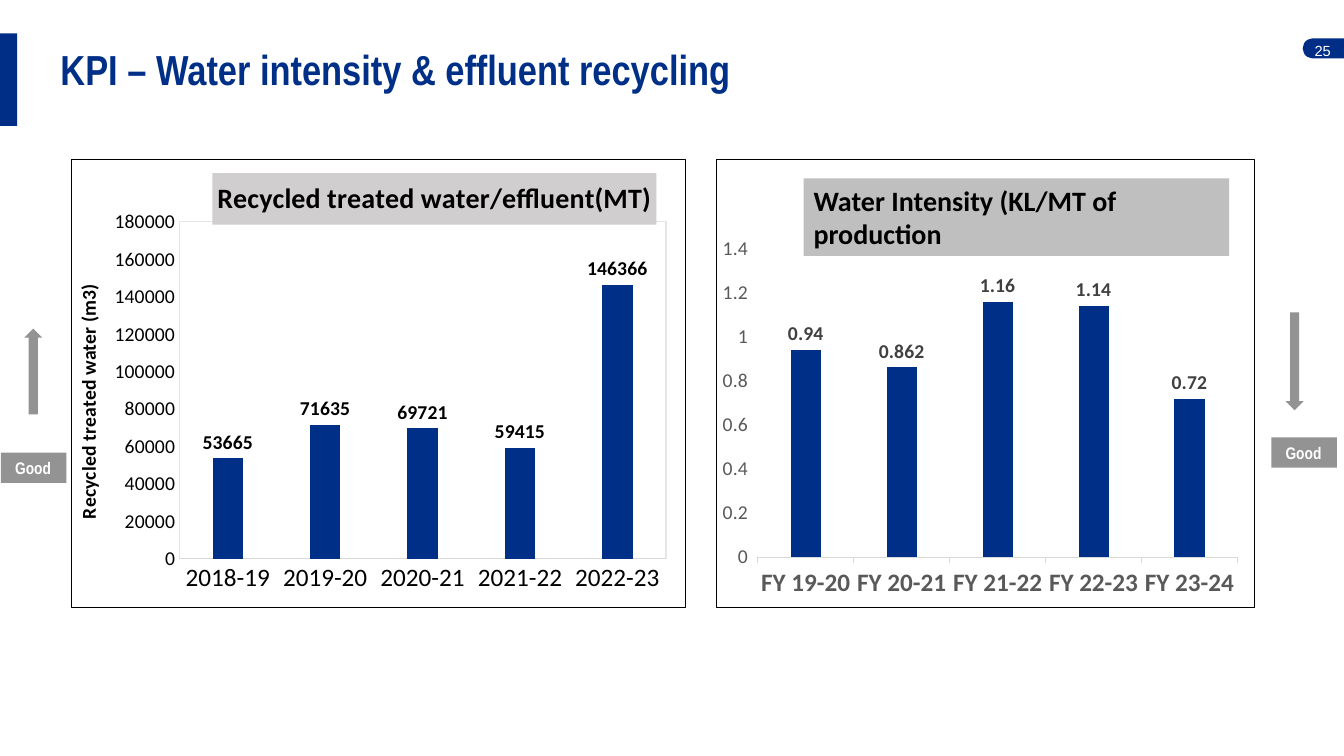
from lxml import etree
from pptx import Presentation
from pptx.chart.data import CategoryChartData
from pptx.dml.color import RGBColor
from pptx.enum.chart import XL_CHART_TYPE, XL_LABEL_POSITION, XL_TICK_MARK
from pptx.enum.shapes import MSO_SHAPE
from pptx.enum.text import MSO_ANCHOR, MSO_AUTO_SIZE, PP_ALIGN
from pptx.oxml import parse_xml
from pptx.util import Inches, Pt

COLUMNS = XL_CHART_TYPE.COLUMN_CLUSTERED
OUTSIDE_END = XL_LABEL_POSITION.OUTSIDE_END
TICK_NONE, TICK_OUT = XL_TICK_MARK.NONE, XL_TICK_MARK.OUTSIDE
RECT, DELAY = MSO_SHAPE.RECTANGLE, MSO_SHAPE.FLOWCHART_DELAY
UP, DOWN = MSO_SHAPE.UP_ARROW, MSO_SHAPE.DOWN_ARROW
TOP, MIDDLE = MSO_ANCHOR.TOP, MSO_ANCHOR.MIDDLE
NO_FIT, LEFT = MSO_AUTO_SIZE.NONE, PP_ALIGN.LEFT

NS = ('xmlns:c="http://schemas.openxmlformats.org/drawingml/2006/chart" '
      'xmlns:a="http://schemas.openxmlformats.org/drawingml/2006/main"')
NAVY, BLUE, GREY, BLACK, WHITE = "002E86", "002F87", "939393", "000000", "FFFFFF"


def rgb(color):
    """Turn a hex string into a colour."""
    return RGBColor.from_string(color)


def border(color, fill=None):
    """Return chart shape properties with a thin outline."""
    paint = f'<a:solidFill><a:srgbClr val="{fill}"/></a:solidFill>' if fill else "<a:noFill/>"
    return parse_xml(f'<c:spPr {NS}>{paint}<a:ln w="9525"><a:solidFill>'
                     f'<a:srgbClr val="{color}"/></a:solidFill></a:ln></c:spPr>')


def layout(inner=False, **place):
    """Return a manual chart layout from fractions of the chart."""
    root = parse_xml(f"<c:layout {NS}><c:manualLayout/></c:layout>")
    modes = {"layoutTarget": "inner"} if inner else {}
    modes.update(xMode="edge", yMode="edge", **place)
    for tag, value in modes.items():
        etree.SubElement(root[0], "{%s}%s" % (root.nsmap["c"], tag)).set("val", str(value))
    return root


def set_layout(parent, new, position):
    """Replace the layout of a chart part."""
    for old in parent.findall("{*}layout"):
        parent.remove(old)
    parent.insert(position, new)


class KpiSlide:
    """Holds the style and the current slide."""

    def __init__(self, deck):
        """Add a title-only slide."""
        self.slide = deck.slides.add_slide(deck.slide_layouts[5])

    def font(self, font, face, size, color, bold=False):
        """Format a font."""
        font.name, font.size, font.bold = face, Pt(size), bold
        font.color.rgb = rgb(color)

    def text(self, frame, words, face, size, color, bold=True, anchor=TOP, inset=0.1):
        """Fill a text frame with one left-aligned run."""
        frame.word_wrap, frame.auto_size = True, NO_FIT
        frame.vertical_anchor, frame.margin_left = anchor, Inches(inset)
        paragraph = frame.paragraphs[0]
        paragraph.alignment = LEFT
        run = paragraph.add_run()
        run.text = words
        self.font(run.font, face, size, color, bold)
        return paragraph

    def title(self, words, *box):
        """Place the slide title."""
        heading = self.slide.shapes.title
        heading.left, heading.top, heading.width, heading.height = map(Inches, box)
        line = self.text(heading.text_frame, words, "Arial Narrow", 30, BLUE, anchor=MIDDLE)
        line.line_spacing = 0.9

    def shape(self, kind, fill, *box):
        """Add a plain filled shape."""
        block = self.slide.shapes.add_shape(kind, *map(Inches, box))
        block.shadow.inherit = False
        block.fill.solid()
        block.fill.fore_color.rgb = rgb(fill)
        block.line.fill.background()
        return block

    def page_number(self, number, *box):
        """Add the page number."""
        holder = self.slide.shapes.add_textbox(*map(Inches, box))
        self.text(holder.text_frame, number, "Arial", 10.5, WHITE, False, MIDDLE)

    def good_marker(self, arrow, arrow_box, label_box):
        """Add the arrow and label showing the good direction."""
        self.shape(arrow, GREY, *arrow_box)
        label = self.shape(RECT, GREY, *label_box)
        self.text(label.text_frame, "Good", "Arial Narrow", 12, WHITE, inset=0.14)

    def chart(self, box, years, values, plot_area, top, step, tick, year_color,
              tick_color, label_color, bold_years=False):
        """Add a framed column chart."""
        data = CategoryChartData()
        data.categories = years
        data.add_series("Series 1", values)
        chart = self.slide.shapes.add_chart(COLUMNS, *map(Inches, box), data).chart
        chart.has_legend = chart.has_title = False
        self.font(chart.font, "Calibri", 14, BLACK)
        plot = chart.plots[0]
        plot.vary_by_categories, plot.gap_width, plot.overlap = False, 219, -27
        columns = plot.series[0].format.fill
        columns.solid()
        columns.fore_color.rgb = rgb(BLUE)
        plot.has_data_labels = True
        labels = plot.data_labels
        labels.show_value, labels.position = True, OUTSIDE_END
        self.font(labels.font, "Calibri", 14, label_color, True)
        year_axis, value_axis = chart.category_axis, chart.value_axis
        for axis in (year_axis, value_axis):
            axis.major_tick_mark, axis.minor_tick_mark = tick, TICK_NONE
            axis.has_major_gridlines = False
        year_axis.format.line.color.rgb = rgb("D9D9D9")
        year_axis.format.line.width = Pt(0.75)
        self.font(year_axis.tick_labels.font, "Calibri", 18, year_color, bold_years)
        value_axis.format.line.fill.background()
        value_axis.minimum_scale, value_axis.maximum_scale = 0, top
        value_axis.major_unit = step
        self.font(value_axis.tick_labels.font, "Calibri", 14, tick_color)
        space = chart._chartSpace
        space.find("{*}chart").addnext(border(BLACK, WHITE))
        x, y, w, h = plot_area
        set_layout(space.find(".//{*}plotArea"), layout(True, x=x, y=y, w=w, h=h), 0)
        return chart

    def chart_title(self, chart, words, fill, x, y):
        """Give a chart a title on a filled band."""
        chart.has_title = True
        heading = chart.chart_title
        run = heading.text_frame.paragraphs[0].add_run()
        run.text = words
        self.font(run.font, "Calibri", 20, BLACK, True)
        heading.include_in_layout = False
        heading.format.fill.solid()
        heading.format.fill.fore_color.rgb = rgb(fill)
        set_layout(heading._element, layout(x=x, y=y), 1)

    def value_title(self, chart, words):
        """Give the value axis an upright title."""
        heading = chart.value_axis.axis_title
        run = heading.text_frame.paragraphs[0].add_run()
        run.text = words
        self.font(run.font, "Calibri", 14, BLACK, True)
        body = heading._element.find(".//{*}bodyPr")
        body.set("rot", "-5400000")
        body.set("vert", "horz")


def main():
    """Build the slide."""
    deck = Presentation()
    deck.slide_width, deck.slide_height = Inches(13.33), Inches(7.5)
    kpi = KpiSlide(deck)
    badge = kpi.shape(DELAY, NAVY, 12.92, 0.38, 0.2, 0.2)
    badge.rotation = 180
    kpi.shape(RECT, NAVY, 13.12, 0.38, 0.21, 0.2)
    kpi.page_number("25", 12.94, 0.3, 0.42, 0.4)
    kpi.shape(RECT, NAVY, 0, 0.33, 0.17, 0.92)
    kpi.title("KPI – Water intensity & effluent recycling", 0.5, 0.41, 12.3, 0.6)

    recycled = kpi.chart(
        (0.7, 1.58, 6.1, 4.45), [f"{year}-{year - 1999}" for year in range(2018, 2023)],
        (53665, 71635, 69721, 59415, 146366), (0.176, 0.139, 0.793, 0.753),
        180000, 20000, TICK_NONE, BLACK, BLACK, BLACK)
    recycled._chartSpace.find(".//{*}plotArea").append(border("E7E6E6"))
    kpi.chart_title(recycled, "Recycled treated water/effluent(MT)", "D0CECE", 0.23, 0.03)
    kpi.value_title(recycled, "Recycled treated water (m3)")

    kpi.chart(
        (7.1, 1.58, 5.35, 4.45), [f"FY {year}-{year + 1}" for year in range(19, 24)],
        (0.94, 0.862, 1.16, 1.14, 0.72), (0.077, 0.199, 0.891, 0.689),
        1.4, 0.2, TICK_OUT, "595959", "595959", "404040", True)
    band = kpi.shape(RECT, "BFBFBF", 7.97, 1.77, 4.22, 0.77)
    kpi.text(band.text_frame, "Water Intensity (KL/MT of production", "Calibri", 20, BLACK)

    kpi.good_marker(DOWN, (12.75, 3.1, 0.18, 0.97), (12.61, 4.34, 0.65, 0.3))
    kpi.good_marker(UP, (0.24, 3.26, 0.18, 0.85), (0.01, 4.49, 0.65, 0.3))
    deck.save("out.pptx")


if __name__ == "__main__":
    main()
